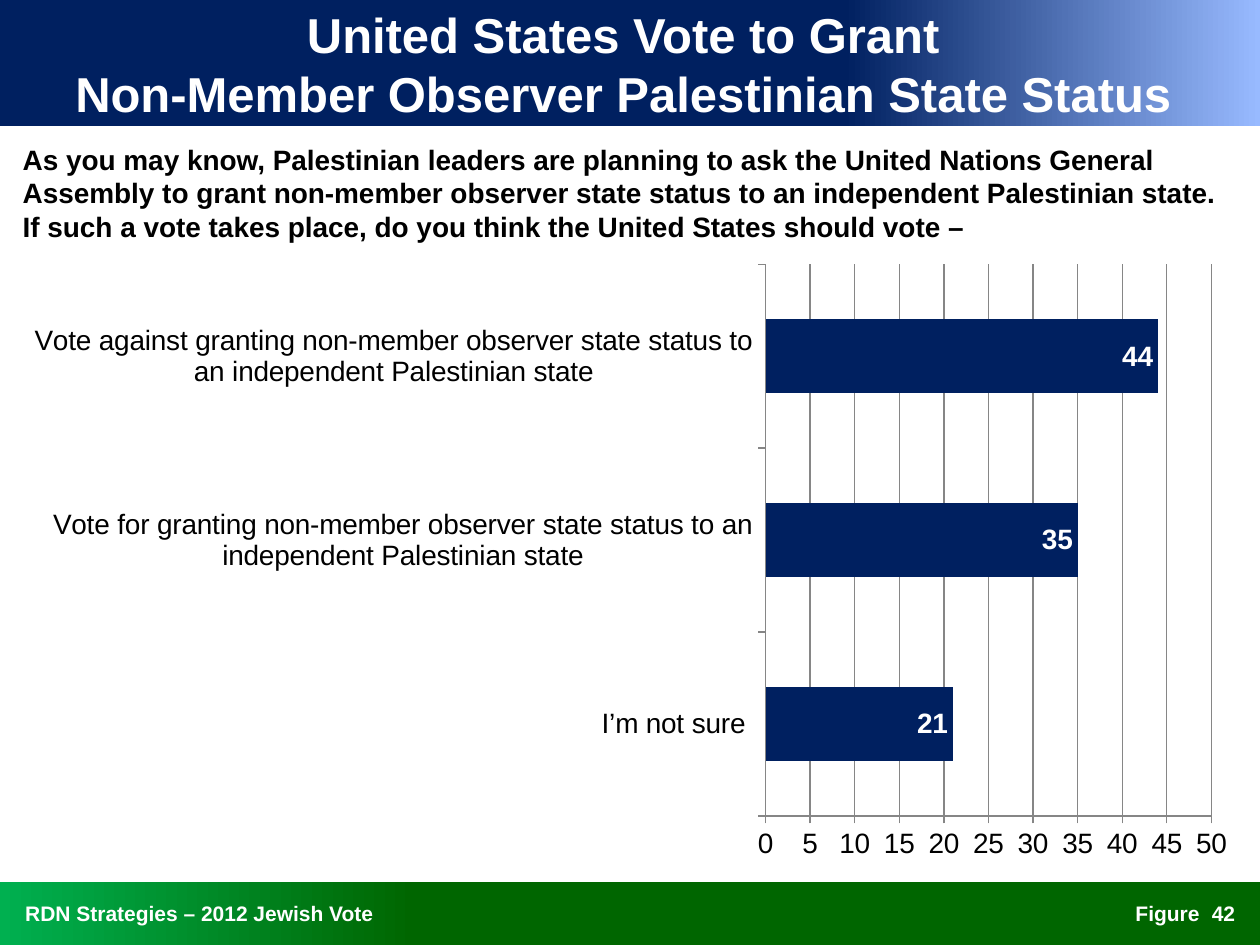
from dataclasses import dataclass

from lxml import etree
from pptx import Presentation
from pptx import util as u
from pptx.chart import data as chart_data
from pptx.dml.color import RGBColor
from pptx.enum import chart as chart_enum
from pptx.enum import shapes, text
from pptx.oxml import ns

COLORS = {
    "navy": "002060",
    "sky": "98BAFF",
    "green": "006600",
    "mint": "00B050",
    "white": "FFFFFF",
    "black": "000000",
    "grid": "868686",
}
FONT = "Arial"
ANSWERS = {
    "I’m not sure ": 21,
    "Vote for granting non-member observer state status to an independent Palestinian state": 35,
    "Vote against granting non-member observer state status to an independent Palestinian state": 44,
}
PLOT_AREA = {"x": 0.61, "y": 0.02, "w": 0.36, "h": 0.89}


@dataclass
class Box:
    left: float
    top: float
    width: float
    height: float

    def lengths(self) -> list:
        return [u.Inches(v) for v in (self.left, self.top, self.width, self.height)]


@dataclass
class Band:
    box: Box
    edge: str
    main: str
    angle: int


@dataclass
class Label:
    words: str
    box: Box
    alignment: text.PP_ALIGN
    left_inset: float = 0.1
    wrap: bool = False


HEADER = Box(0, 0, 10, 1)
QUESTION = Box(0.08, 1.08, 9.83, 0.92)
CHART = Box(0.08, 2, 9.83, 4.92)
BANDS = [
    Band(Box(0, 7, 10, 0.5), "mint", "green", 0),
    Band(HEADER, "sky", "navy", 180),
]
LABELS = [
    Label("Figure", Box(8.45, 7, 1.17, 0.5), text.PP_ALIGN.RIGHT),
    Label("RDN Strategies – 2012 Jewish Vote", Box(0, 7, 6.92, 0.5), text.PP_ALIGN.LEFT, 0.2),
    Label("42", Box(9.42, 7, 0.58, 0.5), text.PP_ALIGN.CENTER, wrap=True),
]


def color(name: str) -> RGBColor:
    return RGBColor.from_string(COLORS[name])


def style_font(font, size: float, color_name: str, bold: bool) -> None:
    font.name = FONT
    font.size = u.Pt(size)
    font.bold = bold
    font.color.rgb = color(color_name)


def add_run(paragraph, words: str, size: float, color_name: str) -> None:
    run = paragraph.add_run()
    run.text = words
    style_font(run.font, size, color_name, True)


def place(shape, box: Box) -> None:
    shape.left, shape.top, shape.width, shape.height = box.lengths()


def add_band(slide, band: Band) -> None:
    shape = slide.shapes.add_shape(shapes.MSO_SHAPE.RECTANGLE, *band.box.lengths())
    shape.shadow.inherit = False
    shape.line.fill.background()
    shape.fill.gradient()
    shape.fill.gradient_angle = band.angle
    stops = zip(shape.fill.gradient_stops, (0, 0.33), (band.edge, band.main))
    for stop, position, name in stops:
        stop.position = position
        stop.color.rgb = color(name)
    slide.shapes.element.insert(2, shape.element)


def add_label(slide, label: Label) -> None:
    frame = slide.shapes.add_textbox(*label.box.lengths()).text_frame
    frame.word_wrap = label.wrap
    frame.vertical_anchor = text.MSO_ANCHOR.MIDDLE
    frame.margin_left = u.Inches(label.left_inset)
    paragraph = frame.paragraphs[0]
    paragraph.alignment = label.alignment
    add_run(paragraph, label.words, 12, "white")


def fill_title(title) -> None:
    place(title, HEADER)
    frame = title.text_frame
    frame.auto_size = text.MSO_AUTO_SIZE.NONE
    frame.vertical_anchor = text.MSO_ANCHOR.MIDDLE
    frame.margin_left = frame.margin_right = u.Inches(0.2)
    paragraph = frame.paragraphs[0]
    paragraph.alignment = text.PP_ALIGN.CENTER
    add_run(paragraph, "United States Vote to Grant ", 28, "white")
    paragraph.add_line_break()
    add_run(paragraph, "Non-Member Observer Palestinian State Status ", 28, "white")


def fill_question(body) -> None:
    place(body, QUESTION)
    body.text_frame.auto_size = text.MSO_AUTO_SIZE.NONE
    paragraph = body.text_frame.paragraphs[0]
    properties = paragraph._p.get_or_add_pPr()
    properties.set("marL", "0")
    properties.set("indent", "0")
    etree.SubElement(properties, ns.qn("a:buNone"))
    add_run(
        paragraph,
        "As you may know, Palestinian leaders are planning to ask the United Nations General "
        "Assembly to grant non-member observer state status to an independent Palestinian state.  "
        "If such a vote takes place, do you think the United States should vote –",
        16,
        "black",
    )


def set_plot_area(chart) -> None:
    plot_area = chart._chartSpace.chart.plotArea
    for old in plot_area.findall(ns.qn("c:layout")):
        plot_area.remove(old)
    layout = etree.Element(ns.qn("c:layout"))
    manual = etree.SubElement(layout, ns.qn("c:manualLayout"))
    settings = {"layoutTarget": "inner", "xMode": "edge", "yMode": "edge", **PLOT_AREA}
    for tag, value in settings.items():
        etree.SubElement(manual, ns.qn(f"c:{tag}")).set("val", str(value))
    plot_area.insert(0, layout)


def add_vote_chart(slide) -> None:
    data = chart_data.CategoryChartData()
    data.categories = list(ANSWERS)
    data.add_series("Series 1", list(ANSWERS.values()))
    chart = slide.shapes.add_chart(
        chart_enum.XL_CHART_TYPE.BAR_CLUSTERED, *CHART.lengths(), data
    ).chart
    chart.has_title = False
    chart.has_legend = False
    style_font(chart.font, 16, "black", False)
    set_plot_area(chart)

    plot = chart.plots[0]
    plot.gap_width = 150
    plot.vary_by_categories = False
    series = plot.series[0]
    series.format.fill.solid()
    series.format.fill.fore_color.rgb = color("navy")
    labels = series.data_labels
    labels.show_value = True
    labels.position = chart_enum.XL_LABEL_POSITION.INSIDE_END
    style_font(labels.font, 16, "white", True)

    value_axis = chart.value_axis
    value_axis.minimum_scale = 0
    value_axis.maximum_scale = 50
    value_axis.major_unit = 5
    value_axis.has_major_gridlines = True
    for axis in (chart.category_axis, value_axis):
        axis.major_tick_mark = chart_enum.XL_TICK_MARK.OUTSIDE
        axis.minor_tick_mark = chart_enum.XL_TICK_MARK.NONE
    for lines in (chart.category_axis, value_axis, value_axis.major_gridlines):
        lines.format.line.width = u.Pt(0.75)
        lines.format.line.color.rgb = color("grid")


def main() -> None:
    presentation = Presentation()
    presentation.slide_width = u.Inches(10)
    presentation.slide_height = u.Inches(7.5)
    slide = presentation.slides.add_slide(presentation.slide_layouts[1])
    for band in BANDS:
        add_band(slide, band)
    fill_title(slide.shapes.title)
    fill_question(slide.placeholders[1])
    add_vote_chart(slide)
    for label in LABELS:
        add_label(slide, label)
    presentation.save("out.pptx")


if __name__ == "__main__":
    main()
